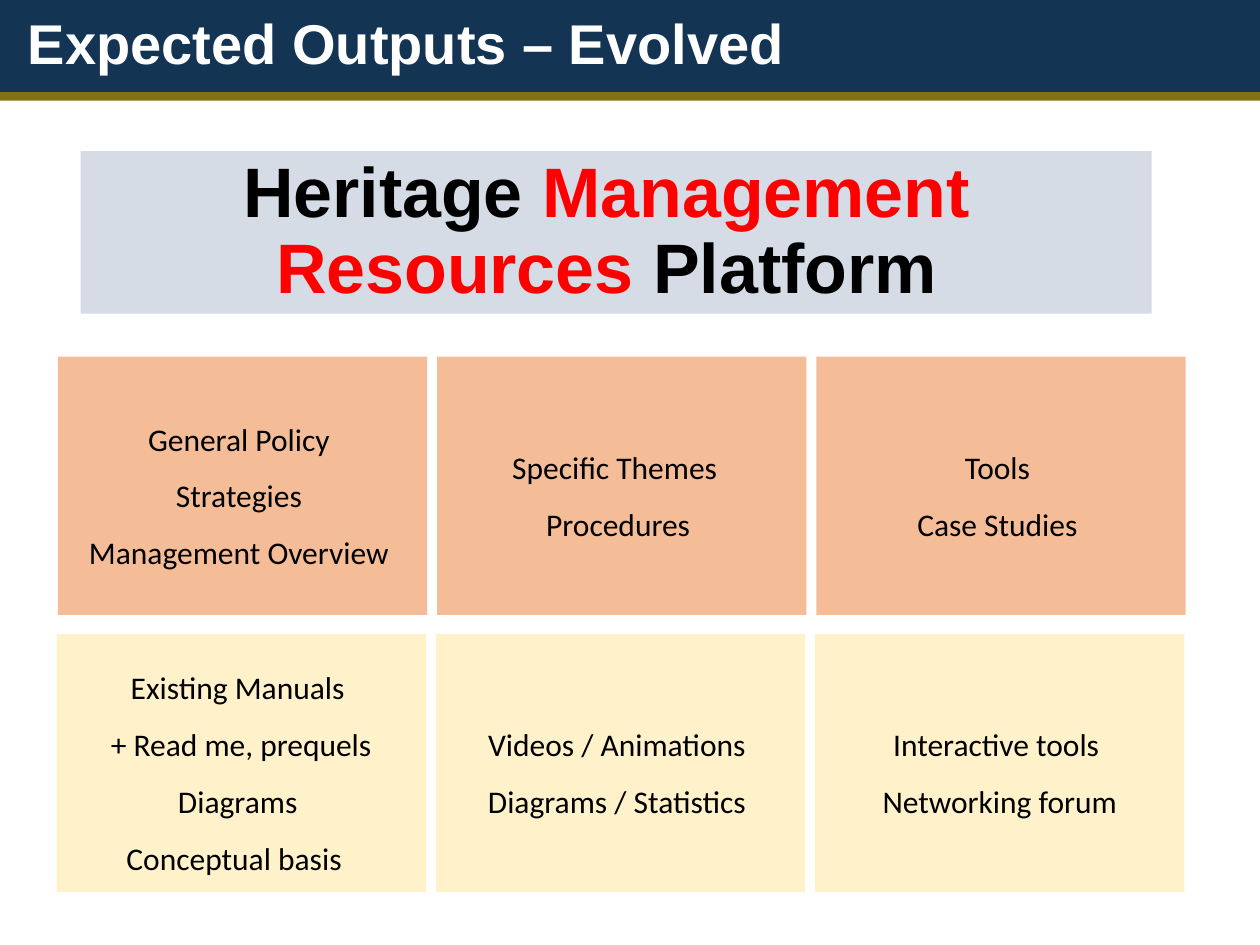
from lxml import etree
from pptx import Presentation
from pptx.dml.color import RGBColor
from pptx.enum import shapes, text
from pptx.oxml import ns
from pptx.util import Inches, Pt


def color(value):
    return RGBColor.from_string(value)


class SlideBuilder:
    def __init__(self, slide):
        self.slide = slide

    def rectangle(self, left, top, width, height, fill, opacity=100):
        shape = self.slide.shapes.add_shape(
            shapes.MSO_SHAPE.RECTANGLE,
            Inches(left), Inches(top), Inches(width), Inches(height))
        shape.shadow.inherit = False
        shape.fill.solid()
        shape.fill.fore_color.rgb = color(fill)
        shape.line.fill.background()
        if opacity < 100:
            fill_color = shape.element.find(
                ".//" + ns.qn("a:solidFill") + "/" + ns.qn("a:srgbClr"))
            alpha = etree.SubElement(fill_color, ns.qn("a:alpha"))
            alpha.set("val", str(opacity * 1000))
        return shape

    def add_text(self, shape, lines, size, font="Arial", bold=False,
                 spacing=0.9, before=0, align=text.PP_ALIGN.CENTER,
                 anchor=text.MSO_ANCHOR.MIDDLE):
        """Fill a shape with lines, each a list of (wording, colour) runs."""
        frame = shape.text_frame
        frame.word_wrap = True
        frame.vertical_anchor = anchor
        for index, runs in enumerate(lines):
            paragraph = frame.add_paragraph() if index else frame.paragraphs[0]
            paragraph.alignment = align
            paragraph.line_spacing = spacing
            paragraph.space_before = Pt(before)
            for wording, run_color in runs:
                run = paragraph.add_run()
                run.text = wording
                run.font.name = font
                run.font.size = Pt(size)
                run.font.bold = bold
                run.font.color.rgb = color(run_color)

    def card(self, left, top, fill, lines):
        shape = self.rectangle(left, top, 2.93, 2.05, fill, opacity=50)
        self.add_text(shape, [[(line, BLACK)] for line in lines], 18,
                      font="Calibri", spacing=1.5)


BLACK, RED, WHITE = "000000", "FF0000", "FFFFFF"
COLUMN_PITCH = 3.01
CARD_ROWS = [
    (0.46, 2.83, "ED7D31", [
        ["General Policy ", "Strategies ", "Management Overview "],
        ["Specific Themes  ", "Procedures "],
        ["Tools ", "Case Studies "],
    ]),
    (0.45, 5.03, "FFE699", [
        ["Existing Manuals ", "+ Read me, prequels", "Diagrams ",
         "Conceptual basis  "],
        ["Videos / Animations ", "Diagrams / Statistics "],
        ["Interactive tools ", "Networking forum"],
    ]),
]


def main():
    presentation = Presentation()
    presentation.slide_width = Inches(10)
    presentation.slide_height = Inches(7.5)
    slide = presentation.slides.add_slide(presentation.slide_layouts[6])
    builder = SlideBuilder(slide)

    builder.rectangle(0, 0.73, 10, 0.07, "807215")
    header = builder.rectangle(0, 0, 10, 0.73, "133453")
    builder.add_text(header, [[(" Expected Outputs – Evolved", WHITE)]], 32,
                     bold=True, before=10, align=text.PP_ALIGN.LEFT)

    platform = builder.rectangle(0.64, 1.2, 8.5, 1.29, "D6DCE5")
    builder.add_text(platform, [
        [("Heritage ", BLACK), ("Management ", RED)],
        [("Resources ", RED), ("Platform ", BLACK)],
    ], 40, bold=True, anchor=text.MSO_ANCHOR.TOP)

    for left, top, fill, cards in CARD_ROWS:
        for column, lines in enumerate(cards):
            builder.card(left + column * COLUMN_PITCH, top, fill, lines)

    presentation.save("out.pptx")


if __name__ == "__main__":
    main()
